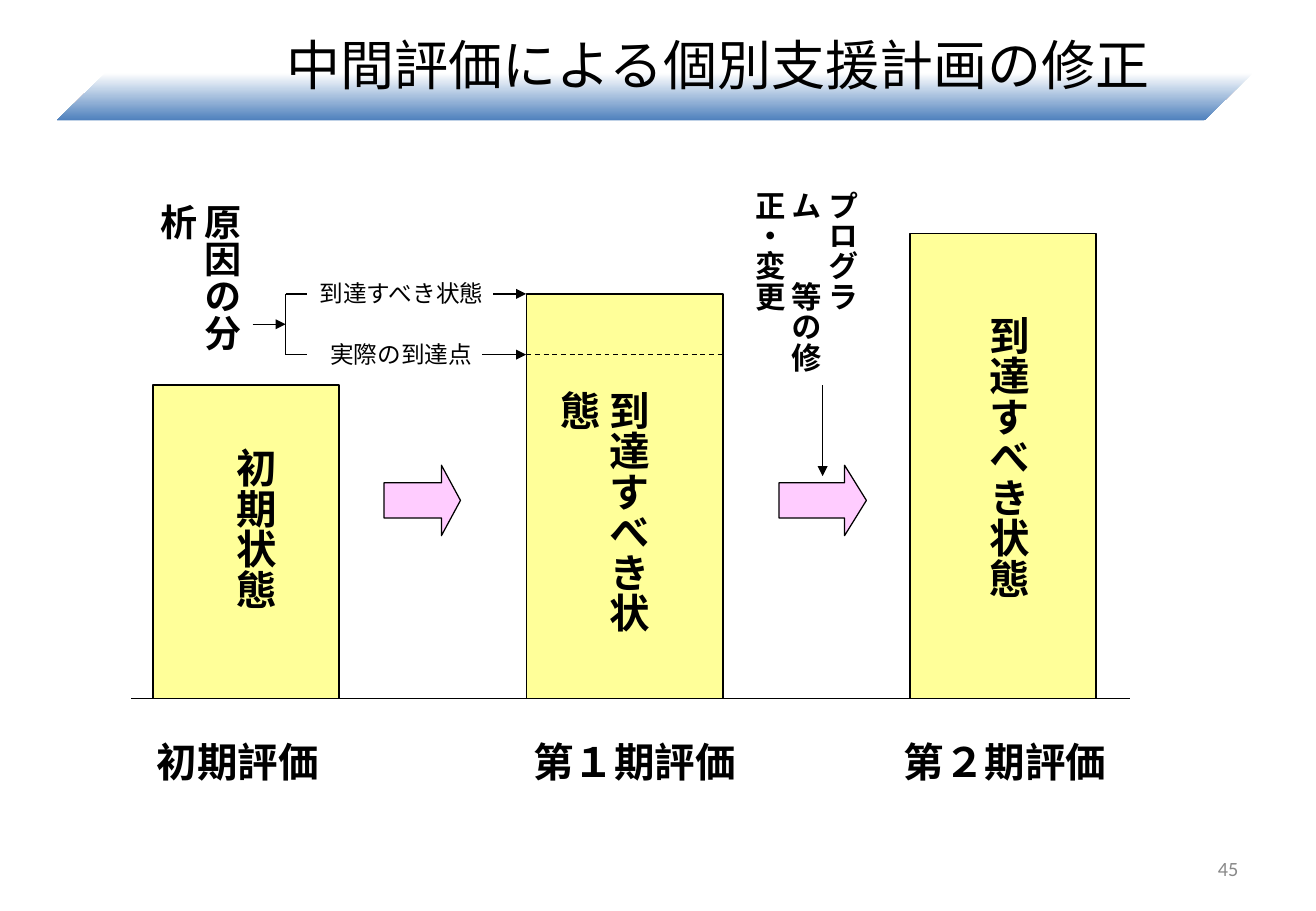
"""Build the slide on revising individual support plans after interim evaluation."""
from dataclasses import dataclass
from typing import Any, Optional

from lxml import etree
from pptx import Presentation
from pptx import util as u
from pptx.dml.color import RGBColor
from pptx.enum import dml, shapes, text
from pptx.oxml.ns import qn

BLACK = RGBColor(0x00, 0x00, 0x00)
WHITE = RGBColor(0xFF, 0xFF, 0xFF)
BLUE = RGBColor(0x4F, 0x81, 0xBD)
YELLOW = RGBColor(0xFF, 0xFF, 0x99)
PINK = RGBColor(0xFF, 0xCC, 0xFF)
GRAY = RGBColor(0x89, 0x89, 0x89)
TITLE_FONT = "Noto Sans CJK JP"
BASELINE, TARGET, ACTUAL, FORK = 5.75, 2.42, 2.92, 2.35
ARROW_TOP, ARROW_HEIGHT = 3.83, 0.58


@dataclass
class Bar:
    left: float
    top: float
    width: float


@dataclass
class BlockArrow:
    left: float
    width: float
    head: float


@dataclass
class Label:
    words: str
    left: float
    top: float
    width: float
    height: float
    size: int = 24
    bold: bool = True
    vertical: bool = False
    tab: Optional[float] = None


@dataclass
class Line:
    x1: float
    y1: float
    x2: float
    y2: float
    arrow: bool = False
    dashed: bool = False


BARS = [Bar(1.26, 3.17, 1.53), Bar(4.33, TARGET, 1.62), Bar(7.49, 1.92, 1.53)]
BLOCK_ARROWS = [BlockArrow(3.16, 0.63, 0.27), BlockArrow(6.41, 0.72, 0.31)]
LABELS = [
    Label("初期評価", 1.19, 6.02, 1.81, 0.5),
    Label("第１期評価", 4.29, 6.02, 1.99, 0.5),
    Label("第２期評価", 7.34, 6.02, 1.99, 0.5),
    Label("到達すべき状態", 2.53, 2.25, 1.62, 0.34, 14, False),
    Label("実際の到達点", 2.62, 2.75, 1.44, 0.34, 14, False),
    Label("原因の分析", 1.49, 1.58, 0.57, 1.67, 22, vertical=True),
    Label("プログラ\vム\t等の修正・変更", 6.32, 1.47, 0.81, 1.78, 18, vertical=True, tab=0.75),
    Label("初期状態", 1.74, 3.59, 0.61, 1.76, vertical=True),
    Label("到達すべき状態", 4.81, 3.12, 0.61, 2.47, vertical=True),
    Label("到達すべき状態", 7.94, 2.5, 0.61, 2.92, vertical=True),
]
LINES = [
    Line(4.33, ACTUAL, 5.96, ACTUAL, dashed=True),
    Line(3.97, ACTUAL, 4.33, ACTUAL, arrow=True),
    Line(4.06, TARGET, 4.33, TARGET, arrow=True),
    Line(FORK, TARGET, 2.53, TARGET),
    Line(FORK, TARGET, FORK, ACTUAL),
    Line(FORK, ACTUAL, 2.53, ACTUAL),
    Line(2.08, 2.67, FORK, 2.67, arrow=True),
    Line(6.77, 3.17, 6.77, 3.92, arrow=True),
    Line(1.08, BASELINE, 9.3, BASELINE),
]


def apply(target: Any, values: dict[str, Any]) -> None:
    for name, value in values.items():
        setattr(target, name, value)


def format_font(font: Any, name: str, size: int, color: RGBColor, bold: bool = False) -> None:
    apply(font, {"name": name, "size": u.Pt(size), "bold": bold})
    font.color.rgb = color


def add_block(slide: Any, kind: Any, left: float, top: float, width: float, height: float,
              color: RGBColor) -> Any:
    shape = slide.shapes.add_shape(kind, *map(u.Inches, (left, top, width, height)))
    shape.shadow.inherit = False
    shape.fill.solid()
    shape.fill.fore_color.rgb = color
    shape.line.color.rgb = BLACK
    shape.line.width = u.Pt(0.75)
    return shape


def add_title(slide: Any) -> None:
    band = add_block(slide, shapes.MSO_SHAPE.PARALLELOGRAM, 0.47, 0.6, 9.84, 0.39, BLUE)
    band.adjustments[0] = 1.025
    band.line.fill.background()
    band.fill.gradient()
    band.fill.gradient_angle = 270
    for stop, color in zip(band.fill.gradient_stops, (WHITE, BLUE)):
        stop.color.rgb = color
    title = slide.shapes.title
    title.element.addprevious(band.element)
    apply(title, {"left": u.Inches(0.93), "top": u.Inches(0.21),
                  "width": u.Inches(8.98), "height": u.Inches(0.64)})
    title.text_frame.text = "中間評価による個別支援計画の修正"
    apply(title.text_frame, {"word_wrap": True, "margin_left": u.Inches(1.43),
                             "vertical_anchor": text.MSO_ANCHOR.TOP,
                             "auto_size": text.MSO_AUTO_SIZE.SHAPE_TO_FIT_TEXT})
    paragraph = title.text_frame.paragraphs[0]
    paragraph.alignment = text.PP_ALIGN.LEFT
    run = paragraph.runs[0]
    format_font(run.font, TITLE_FONT, 32, BLACK)
    properties = run.font._element if hasattr(run.font, "_element") else title.element.find(".//" + qn("a:rPr"))
    etree.SubElement(properties, qn("a:ea"), typeface=TITLE_FONT)


def add_label(slide: Any, label: Label) -> None:
    box = slide.shapes.add_textbox(*map(u.Inches, (label.left, label.top, label.width, label.height)))
    frame = box.text_frame
    apply(frame, {"word_wrap": True, "auto_size": text.MSO_AUTO_SIZE.SHAPE_TO_FIT_TEXT})
    if label.vertical:
        box.element.find(".//" + qn("a:bodyPr")).set("vert", "eaVert")
    paragraph = frame.paragraphs[0]
    paragraph.text = label.words
    paragraph.alignment = text.PP_ALIGN.LEFT
    if label.tab:
        tabs = etree.SubElement(box.element.find(".//" + qn("a:pPr")), qn("a:tabLst"))
        etree.SubElement(tabs, qn("a:tab"), pos=str(u.Inches(label.tab)), algn="l")
    format_font(paragraph.font, "Arial", label.size, BLACK, label.bold)
    for run in paragraph.runs:
        format_font(run.font, "Arial", label.size, BLACK, label.bold)


def add_line(slide: Any, line: Line) -> None:
    connector = slide.shapes.add_connector(
        shapes.MSO_CONNECTOR.STRAIGHT, *map(u.Inches, (line.x1, line.y1, line.x2, line.y2)))
    connector.line.color.rgb = BLACK
    connector.line.width = u.Pt(0.75)
    if line.dashed:
        connector.line.dash_style = dml.MSO_LINE.DASH
    properties = connector.element.find(qn("p:spPr"))
    if line.arrow:
        etree.SubElement(properties.find(qn("a:ln")), qn("a:tailEnd"), type="triangle")
    etree.SubElement(properties, qn("a:effectLst"))


def add_page_number(slide: Any) -> None:
    box = slide.shapes.add_textbox(*map(u.Inches, (7.76, 6.95, 2.53, 0.4)))
    apply(box.text_frame, {"text": "45", "word_wrap": True,
                           "vertical_anchor": text.MSO_ANCHOR.MIDDLE})
    paragraph = box.text_frame.paragraphs[0]
    paragraph.alignment = text.PP_ALIGN.RIGHT
    format_font(paragraph.runs[0].font, "Calibri", 12, GRAY)


def main() -> None:
    presentation = Presentation()
    apply(presentation, {"slide_width": u.Inches(10.83), "slide_height": u.Inches(7.5)})
    slide = presentation.slides.add_slide(presentation.slide_layouts[5])
    add_title(slide)
    for bar in BARS:
        add_block(slide, shapes.MSO_SHAPE.RECTANGLE, bar.left, bar.top, bar.width,
                  BASELINE - bar.top, YELLOW)
    for arrow in BLOCK_ARROWS:
        shape = add_block(slide, shapes.MSO_SHAPE.RIGHT_ARROW, arrow.left, ARROW_TOP,
                          arrow.width, ARROW_HEIGHT, PINK)
        shape.adjustments[1] = arrow.head
    for label in LABELS:
        add_label(slide, label)
    for line in LINES:
        add_line(slide, line)
    add_page_number(slide)
    presentation.save("out.pptx")


if __name__ == "__main__":
    main()
